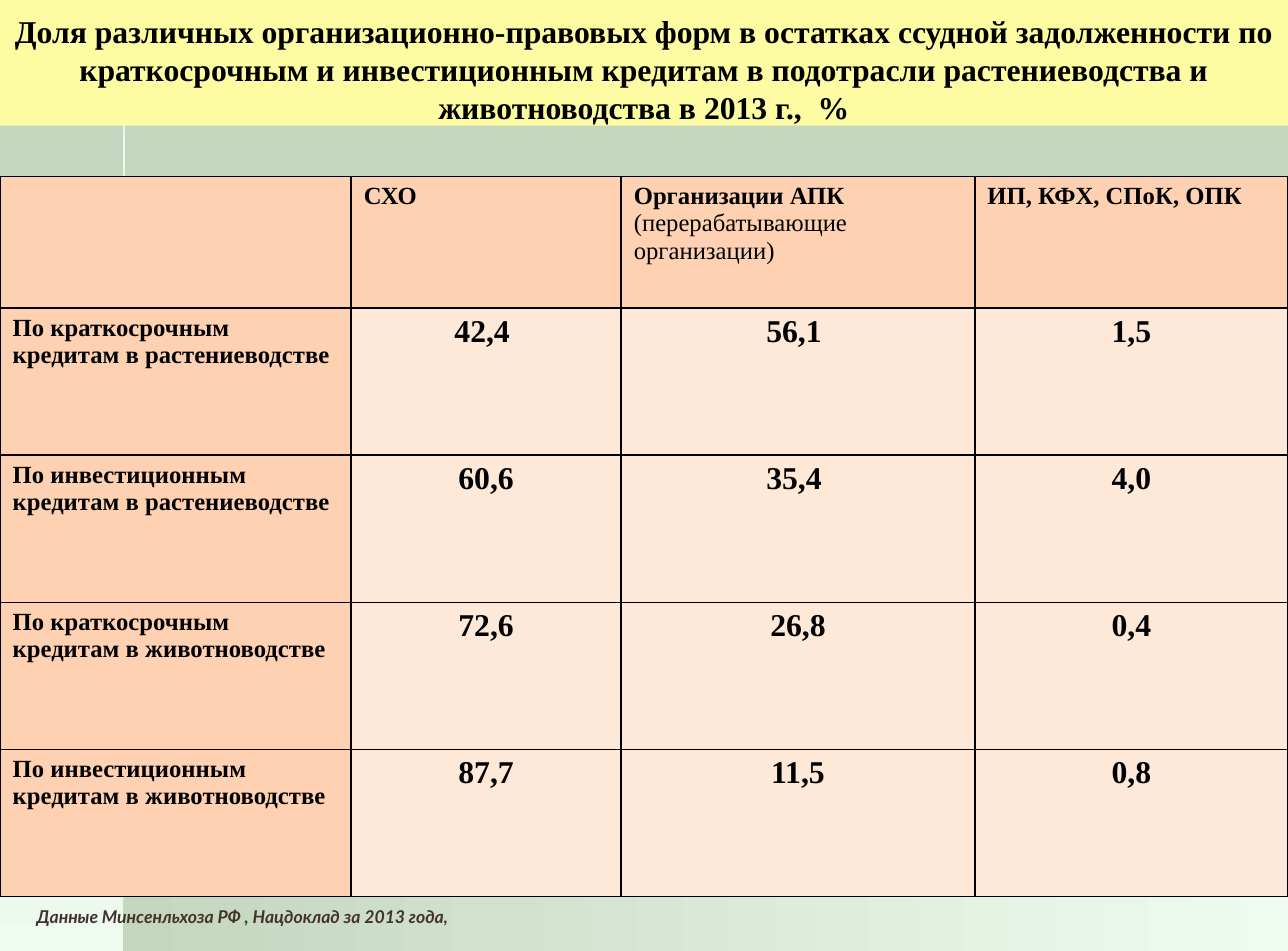
"""Build a slide on the shares of legal forms in outstanding farm loan debt."""
from dataclasses import dataclass

from lxml import etree
from pptx import Presentation
from pptx.dml.color import RGBColor
from pptx.enum.shapes import MSO_SHAPE
from pptx.enum.text import MSO_ANCHOR, PP_ALIGN
from pptx.oxml.ns import qn
from pptx.util import Emu, Pt

RECT = MSO_SHAPE.RECTANGLE
BOTTOM = MSO_ANCHOR.BOTTOM
LEFT, CENTER = PP_ALIGN.LEFT, PP_ALIGN.CENTER
SCALE = 9144
WIDTH, HEIGHT = 1016, 750
ACROSS, DOWN = 0, 270


@dataclass(frozen=True)
class Theme:
    sage: str = "C4D6BE"
    mint: str = "EFFBF0"
    lime: str = "CCFF99"
    yellow: str = "FEFCA2"
    peach: str = "FDD1B1"
    cream: str = "FEE8D8"
    black: str = "000000"
    brown: str = "443329"
    serif: str = "Times New Roman"
    sans: str = "Lato"
    large: int = 18
    label: int = 14
    small: int = 10
    border: int = 1


THEME = Theme()


@dataclass(frozen=True)
class Band:
    left: int
    top: int
    width: int
    height: int
    start: str
    end: str
    angle: int


@dataclass(frozen=True)
class Style:
    size: int
    font: str = THEME.serif
    color: str = THEME.black
    italic: bool = False
    align: PP_ALIGN = LEFT


TITLE = Style(THEME.large, align=CENTER)
LABEL = Style(THEME.label)
VALUE = Style(THEME.large, align=CENTER)
NOTE = Style(THEME.small, THEME.sans, THEME.brown, True)

BANDS = (
    Band(98, 202, 918, 548, THEME.sage, THEME.mint, ACROSS),
    Band(0, 202, 98, 548, THEME.sage, THEME.mint, DOWN),
    Band(97, 1, 2, 120, THEME.sage, THEME.mint, DOWN),
    Band(97, 282, 2, 468, THEME.mint, THEME.sage, DOWN),
    Band(97, 121, 2, 44, THEME.mint, THEME.lime, DOWN),
)
HEADING = (
    "Доля различных организационно-правовых форм в остатках ссудной "
    "задолженности по краткосрочным и инвестиционным кредитам в подотрасли "
    "растениеводства и животноводства в 2013 г.,  %"
)
SOURCE = "Данные Минсенльхоза РФ , Нацдоклад за 2013 года,"
DETAIL = "(перерабатывающие организации)"
SHARES = (
    ("", "СХО", "Организации АПК ", "ИП, КФХ, СПоК, ОПК"),
    ("По краткосрочным кредитам в растениеводстве", "42,4 ", "56,1 ", "1,5"),
    ("По инвестиционным кредитам в растениеводстве", "60,6", "35,4 ", "4,0"),
    ("По краткосрочным кредитам в животноводстве", "72,6", "26,8", "0,4"),
    ("По инвестиционным кредитам в животноводстве", "87,7", "11,5", "0,8"),
)


def px(count: int) -> Emu:
    """Turn px into EMU."""
    return Emu(count * SCALE)


def rgb(code: str) -> RGBColor:
    """Read a hex colour."""
    return RGBColor.from_string(code)


def format_run(run, style: Style, bold: bool = True) -> None:
    """Give a run its type style."""
    font = run.font
    font.size, font.name = Pt(style.size), style.font
    font.bold, font.italic = bold, style.italic
    font.color.rgb = rgb(style.color)


def write(frame, text: str, style: Style) -> None:
    """Put one styled paragraph into a frame."""
    para = frame.paragraphs[0]
    para.text = text
    para.alignment = style.align
    for run in para.runs:
        format_run(run, style)
    if not text:
        end = etree.SubElement(para._p, qn("a:endParaRPr"))
        end.set("sz", str(style.size * 100))


def add_rect(slide, left: int, top: int, width: int, height: int):
    """Add a rectangle with no line or shadow."""
    shape = slide.shapes.add_shape(RECT, *map(px, (left, top, width, height)))
    shape.shadow.inherit = False
    shape.line.fill.background()
    return shape


def add_band(slide, band: Band) -> None:
    """Draw a band with a two-colour gradient."""
    fill = add_rect(slide, band.left, band.top, band.width, band.height).fill
    fill.gradient()
    fill.gradient_angle = band.angle
    for stop, color in zip(fill.gradient_stops, (band.start, band.end)):
        stop.color.rgb = rgb(color)


def add_title(slide) -> None:
    """Draw the heading on its yellow strip."""
    shape = add_rect(slide, 0, 0, WIDTH, 99)
    shape.fill.solid()
    shape.fill.fore_color.rgb = rgb(THEME.yellow)
    frame = shape.text_frame
    frame.word_wrap = True
    frame.vertical_anchor = BOTTOM
    frame.margin_left = frame.margin_right = px(5)
    frame.margin_top = frame.margin_bottom = 0
    write(frame, HEADING, TITLE)


def add_grid(slide, left: int, top: int, cols: tuple, rows: tuple):
    """Add a plain table with the given column and row sizes."""
    box = map(px, (left, top, sum(cols), sum(rows)))
    table = slide.shapes.add_table(len(rows), len(cols), *box).table
    table.first_row = table.horz_banding = False
    for col, width in zip(table.columns, cols):
        col.width = px(width)
    for row, height in zip(table.rows, rows):
        row.height = px(height)
    return table


def paint(cell, fill: str = "", line: str = "") -> None:
    """Set the borders and fill of a cell, or clear them."""
    props = cell._tc.get_or_add_tcPr()
    for side in ("lnL", "lnR", "lnT", "lnB"):
        edge = etree.SubElement(props, qn(f"a:{side}"))
        if line:
            edge.set("w", str(Pt(THEME.border)))
            solid = etree.SubElement(edge, qn("a:solidFill"))
            etree.SubElement(solid, qn("a:srgbClr")).set("val", line)
        else:
            etree.SubElement(edge, qn("a:noFill"))
    if fill:
        cell.fill.solid()
        cell.fill.fore_color.rgb = rgb(fill)
    else:
        cell.fill.background()


def add_note(slide) -> None:
    """Add the source line under the main table."""
    table = add_grid(slide, 28, 714, (417, 126, 134), (14,))
    for cell, text in zip(table.iter_cells(), (SOURCE, "", "")):
        cell.margin_left = cell.margin_right = cell.margin_top = px(1)
        cell.margin_bottom = 0
        paint(cell)
        write(cell.text_frame, text, NOTE)


def add_shares(slide) -> None:
    """Add the main table of shares."""
    table = add_grid(slide, 0, 139, (277, 213, 279, 247), (104,) + (116,) * 4)
    for y, row in enumerate(SHARES):
        for x, text in enumerate(row):
            cell, inner = table.cell(y, x), x > 0 and y > 0
            paint(cell, THEME.cream if inner else THEME.peach, THEME.black)
            write(cell.text_frame, text, VALUE if inner else LABEL)
    run = table.cell(0, 2).text_frame.paragraphs[0].add_run()
    run.text = DETAIL
    format_run(run, LABEL, bold=False)


def main() -> None:
    """Build and save the slide."""
    deck = Presentation()
    deck.slide_width, deck.slide_height = px(WIDTH), px(HEIGHT)
    slide = deck.slides.add_slide(deck.slide_layouts[6])
    slide.background.fill.solid()
    slide.background.fill.fore_color.rgb = rgb(THEME.sage)
    for band in BANDS:
        add_band(slide, band)
    add_note(slide)
    add_title(slide)
    add_shares(slide)
    deck.save("out.pptx")


if __name__ == "__main__":
    main()
